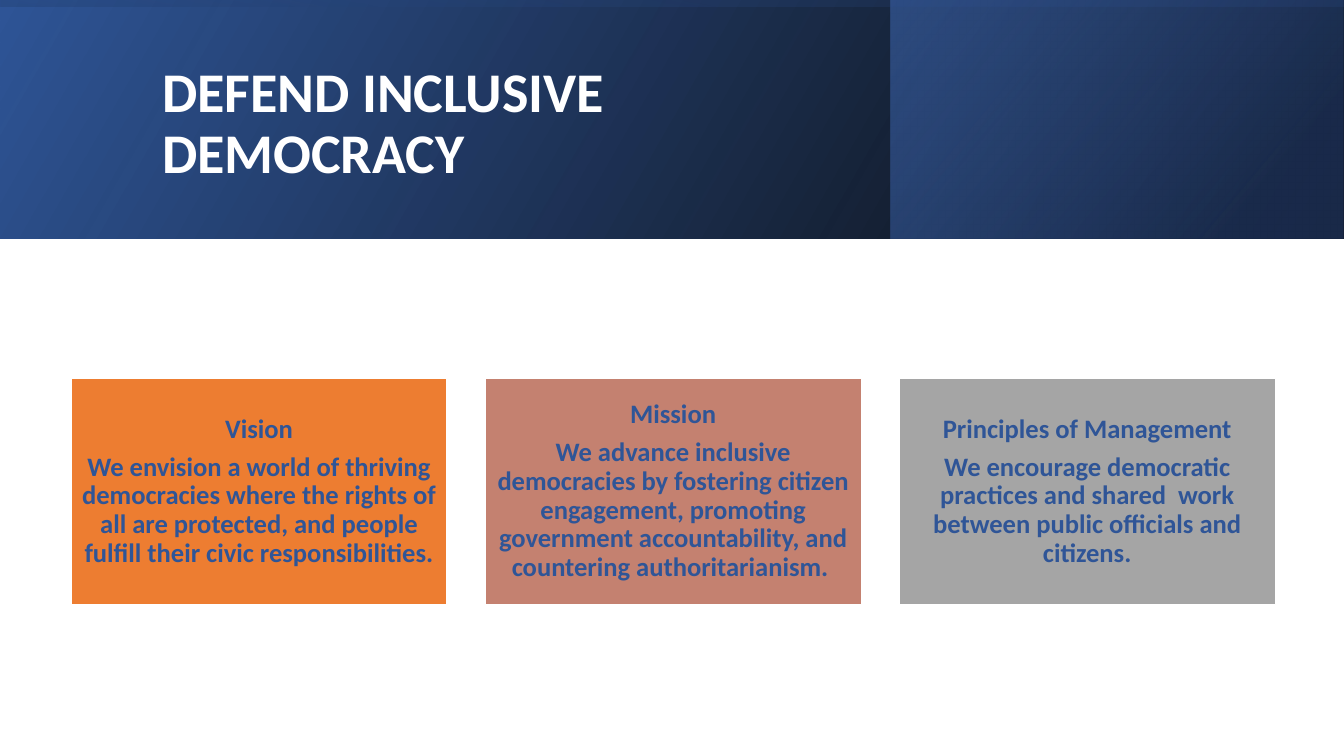
from pptx import Presentation
from pptx.dml.color import RGBColor
from pptx.enum.shapes import MSO_SHAPE
from pptx.enum.text import MSO_ANCHOR, PP_ALIGN
from pptx.oxml.ns import qn
from pptx.util import Pt
from lxml.etree import SubElement


def color(hex_value):
    return RGBColor.from_string(hex_value)


def write(frame, text, size, hex_value, align=PP_ALIGN.LEFT, inset=7.2, after=0):
    frame.word_wrap = True
    frame.vertical_anchor = MSO_ANCHOR.MIDDLE
    frame.margin_left = frame.margin_right = Pt(inset)
    frame.margin_top = frame.margin_bottom = Pt(inset if after else 3.6)
    frame.text = text
    for paragraph in frame.paragraphs:
        paragraph.alignment = align
        paragraph.line_spacing = 0.9
        paragraph.space_after = Pt(after)
        for run in paragraph.runs:
            run.font.name = "Calibri"
            run.font.size = Pt(size)
            run.font.bold = True
            run.font.color.rgb = color(hex_value)


deck = Presentation()
deck.slide_width, deck.slide_height = Pt(960), Pt(540)
slide = deck.slides.add_slide(deck.slide_layouts[6])

BAND_HEIGHT = 170.6
band_center = (960 - BAND_HEIGHT) / 2
header_layers = [
    (0, 0, 960, BAND_HEIGHT, 0, 30, [(0, "000000", 96), (1, "2F5597", 100)]),
    (636.5, 0, 322.8, BAND_HEIGHT, 0, 40, [(0.19, "203864", 68), (1, "4472C4", 48)]),
    (band_center, -band_center, BAND_HEIGHT, 960, 270, 10,
     [(0.23, "2F5597", 16), (0.99, "000000", 45)]),
]
for left, top, width, height, rotation, angle, stops in header_layers:
    layer = slide.shapes.add_shape(
        MSO_SHAPE.RECTANGLE, Pt(left), Pt(top), Pt(width), Pt(height))
    layer.shadow.inherit = False
    layer.line.fill.background()
    layer.rotation = rotation
    layer._element.spPr.xfrm.set("flipH", "1")
    layer.fill.gradient()
    layer.fill.gradient_angle = angle
    for stop, (position, hex_value, _) in zip(layer.fill.gradient_stops, stops):
        stop.position = position
        stop.color.rgb = color(hex_value)
    stop_colors = list(layer._element.spPr.iter(qn("a:srgbClr")))
    for stop_color, (_, _, opacity) in zip(stop_colors, stops):
        SubElement(stop_color, qn("a:alpha")).set("val", str(opacity * 1000))

title = slide.shapes.add_textbox(Pt(108.7), Pt(27.4), Pt(765.4), Pt(123.8))
write(title.text_frame, "DEFEND INCLUSIVE\vDEMOCRACY", 40, "FFFFFF")

statements = [
    ("Vision", "ED7D31",
     "We envision a world of thriving democracies where the rights of all "
     "are protected, and people fulfill their civic responsibilities."),
    ("Mission", "C48170",
     "We advance inclusive democracies by fostering citizen engagement, "
     "promoting government accountability, and countering authoritarianism. "),
    ("Principles of Management", "A5A5A5",
     "We encourage democratic practices and shared  work between public "
     "officials and citizens."),
]
for index, (heading, fill, body) in enumerate(statements):
    card = slide.shapes.add_shape(
        MSO_SHAPE.RECTANGLE, Pt(50.6 + index * 295.8), Pt(270.5), Pt(268.8), Pt(161.3))
    card.shadow.inherit = False
    card.fill.solid()
    card.fill.fore_color.rgb = color(fill)
    card.line.color.rgb = color("FFFFFF")
    card.line.width = Pt(1)
    write(card.text_frame, f"{heading}\n{body}", 19, "2F5597",
          align=PP_ALIGN.CENTER, inset=5.7, after=6.65)

deck.save("out.pptx")
